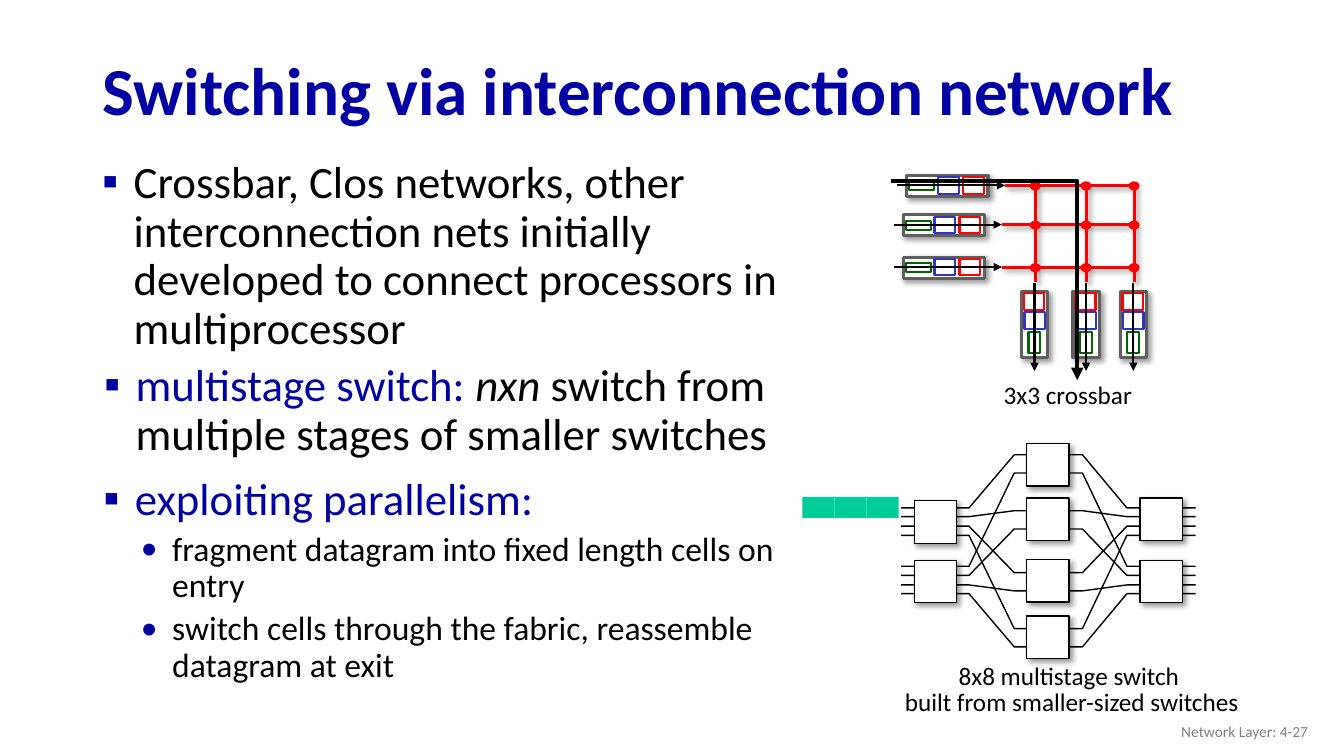
from dataclasses import dataclass
from itertools import product

from lxml.etree import SubElement
from pptx import Presentation
from pptx.dml.color import RGBColor as Rgb
from pptx.enum.shapes import MSO_CONNECTOR as Connector, MSO_SHAPE as Shape
from pptx.enum.text import MSO_ANCHOR as Anchor, PP_ALIGN as Align
from pptx.oxml.ns import qn
from pptx.util import Cm, Pt


@dataclass(frozen=True)
class Theme:
    font: str = "Calibri"
    navy: Rgb = Rgb(0x00, 0x00, 0xA3)
    black: Rgb = Rgb(0x00, 0x00, 0x00)
    white: Rgb = Rgb(0xFF, 0xFF, 0xFF)
    gray: Rgb = Rgb(0x80, 0x80, 0x80)
    frame: Rgb = Rgb(0x5F, 0x5F, 0x5F)
    green: Rgb = Rgb(0x00, 0x66, 0x00)
    blue: Rgb = Rgb(0x33, 0x33, 0xCC)
    red: Rgb = Rgb(0xFF, 0x00, 0x00)
    mint: Rgb = Rgb(0x00, 0xCC, 0x99)
    title: int = 48
    body: int = 32
    detail: int = 24
    label: int = 18
    footer: int = 11


theme = Theme()


def style(shape, line=None, width=0, fill=None, shadow=False, arrow=False):
    if hasattr(shape, "fill"):
        if fill is None:
            shape.fill.background()
        else:
            shape.fill.solid()
            shape.fill.fore_color.rgb = fill
    if line is None:
        shape.line.fill.background()
    else:
        shape.line.color.rgb = line
        shape.line.width = Pt(width)
    properties = shape._element.spPr
    if arrow:
        SubElement(properties.find(qn("a:ln")), qn("a:tailEnd"), type="triangle")
    effects = SubElement(properties, qn("a:effectLst"))
    if shadow:
        outer = SubElement(effects, qn("a:outerShdw"), blurRad=str(Pt(4)), dist=str(Pt(3)),
                           dir="2700000", algn="tl", rotWithShape="0")
        color = SubElement(outer, qn("a:srgbClr"), val=str(theme.black))
        SubElement(color, qn("a:alpha"), val="40000")


def add_text(shapes, box, size, paragraphs, spacing=0.9, align=Align.LEFT,
             anchor=Anchor.TOP, wrap=True, bold=False):
    frame = shapes.add_textbox(*map(Cm, box)).text_frame
    frame.word_wrap = wrap
    frame.vertical_anchor = anchor
    for index, (bullet, runs) in enumerate(paragraphs):
        paragraph = frame.add_paragraph() if index else frame.paragraphs[0]
        paragraph.alignment = align
        paragraph.line_spacing = spacing
        nested = bullet == "•"
        if bullet:
            paragraph.level = int(nested)
            paragraph.space_before = Pt(5 if nested else 10)
            properties = paragraph._p.get_or_add_pPr()
            properties.set("marL", str(Cm(1.93 if nested else 0.99)))
            properties.set("indent", str(Cm(-0.79)))
            color = SubElement(properties, qn("a:buClr"))
            SubElement(color, qn("a:srgbClr"), val=str(theme.navy))
            SubElement(properties, qn("a:buFont"), typeface=theme.font)
            SubElement(properties, qn("a:buChar"), char=bullet)
        paragraph.font.name = theme.font
        paragraph.font.size = Pt(theme.detail if nested else size)
        paragraph.font.bold = bold
        for text, color, italic in runs:
            run = paragraph.add_run()
            run.text = text
            run.font.color.rgb = color
            run.font.italic = italic


presentation = Presentation()
presentation.slide_width = Cm(33.87)
presentation.slide_height = Cm(19.05)
slide = presentation.slides.add_slide(presentation.slide_layouts[6])

add_text(slide.shapes, (2.13, 3.91, 17.98, 14.17), theme.body, [
    ("▪", [("Crossbar, Clos networks, other interconnection nets initially developed "
            "to connect processors in multiprocessor", theme.black, False)])])
add_text(slide.shapes, (2.34, 1.12, 29.21, 2.49), theme.title, [
    (None, [("Switching via interconnection network", theme.navy, False)])],
    anchor=Anchor.MIDDLE, bold=True)

crossbar = slide.shapes.add_group_shape().shapes
input_ports = [(22.61, 4.67), (22.53, 5.66), (22.53, 6.73)]
output_ports = [(28.56, 7.14), (27.37, 7.14), (26.07, 7.14)]
input_parts = [
    (0.23, -0.25, 2.06, 0.53, theme.frame),
    (0.3, -0.1, 0.64, 0.23, theme.green),
    (1.02, -0.2, 0.53, 0.41, theme.blue),
    (1.65, -0.2, 0.53, 0.41, theme.red),
]
output_parts = [
    (-0.33, 0.2, 0.66, 1.68, theme.frame),
    (-0.15, 1.23, 0.3, 0.53, theme.green),
    (-0.25, 0.72, 0.51, 0.43, theme.blue),
    (-0.27, 0.24, 0.51, 0.43, theme.red),
]
for ports, parts, reach, drop in [(input_ports, input_parts, 2.72, 0),
                                  (output_ports, output_parts, 0, 2.21)]:
    for x, y in ports:
        for dx, dy, width, height, color in parts:
            part = crossbar.add_shape(Shape.RECTANGLE, Cm(x + dx), Cm(y + dy), Cm(width), Cm(height))
            outer = color == theme.frame
            style(part, color, 2.25 if outer else 1.5, theme.white, shadow=outer)
        arrow = crossbar.add_connector(Connector.STRAIGHT, Cm(x), Cm(y), Cm(x + reach), Cm(y + drop))
        style(arrow, theme.black, 1.5, arrow=True)

rows = [y for x, y in input_ports]
columns = [26.09, 27.37, 28.58]
buses = [(x + 2.72, y, columns[-1], y) for x, y in input_ports]
buses += [(x, 7.11, x, rows[0]) for x in columns]
for ends in buses:
    bus = crossbar.add_connector(Connector.STRAIGHT, *map(Cm, ends))
    style(bus, theme.red, 2.25, shadow=True)
for x, y in product(columns, rows):
    dot = crossbar.add_shape(Shape.OVAL, Cm(x - 0.14), Cm(y - 0.1), Cm(0.28), Cm(0.23))
    style(dot, fill=theme.red)

route = crossbar.build_freeform(Cm(22.45), Cm(4.56))
route.add_line_segments([(Cm(27.15), Cm(4.56)), (Cm(27.15), Cm(9.58))], close=False)
style(route.convert_to_shape(), theme.black, 3, arrow=True)

multistage = slide.shapes.add_group_shape().shapes
axis = 13.88
wire_columns = [22.71, 24.42, 25.56, 27.28, 28.4, 30.13]
wire_offsets = [(1.08, 2.42), (0.86, 1.01), (0.62, -0.55), (0.39, -1.96)]
for (outer, inner), side in product(wire_offsets, (-1, 1)):
    heights = [axis + side * offset for offset in (outer, outer, inner, inner, outer, outer)]
    points = [(Cm(x), Cm(y)) for x, y in zip(wire_columns, heights)]
    wire = multistage.build_freeform(*points[0])
    wire.add_line_segments(points[1:], close=False)
    style(wire.convert_to_shape(), theme.black, 1)

stages = [(23.04, [12.62, 14.12]), (25.87, [11.18, 12.55, 14.1, 15.52]), (28.73, [12.55, 14.12])]
for x, tops in stages:
    for y in tops:
        switch = multistage.add_shape(Shape.RECTANGLE, Cm(x), Cm(y), Cm(1.07), Cm(1.07))
        style(switch, theme.black, 1, theme.white, shadow=True)
add_text(multistage, (22.5, 16.64, 9.02, 1.57), theme.label, [
    (None, [("8x8 multistage switch ", theme.black, False)]),
    (None, [("built from smaller-sized switches", theme.black, False)])],
    spacing=0.85, align=Align.CENTER, wrap=False)

add_text(slide.shapes, (2.18, 9.02, 17.98, 3.05), theme.body, [
    ("▪", [("multistage switch: ", theme.navy, False), ("nxn", theme.black, True),
           (" switch from multiple stages of smaller switches", theme.black, False)])])
add_text(slide.shapes, (2.16, 11.89, 17.98, 5.89), theme.body, [
    ("▪", [("exploiting parallelism:", theme.navy, False)]),
    ("•", [("fragment datagram into fixed length cells on entry", theme.black, False)]),
    ("•", [("switch cells through the fabric, reassemble datagram at exit", theme.black, False)])])
add_text(slide.shapes, (25.02, 9.55, 3.78, 0.91), theme.label, [
    (None, [("3x3 crossbar", theme.black, False)])],
    spacing=0.85, align=Align.CENTER, wrap=False)

for index in range(3):
    cell = slide.shapes.add_shape(Shape.RECTANGLE, Cm(20.22 + 0.81 * index), Cm(12.52), Cm(0.81), Cm(0.53))
    style(cell, fill=theme.mint)

add_text(slide.shapes, (25.6, 17.91, 7.62, 1.02), theme.footer, [
    (None, [("Network Layer: 4-27", theme.gray, False)])],
    spacing=1.0, align=Align.RIGHT, anchor=Anchor.MIDDLE)

presentation.save("out.pptx")
